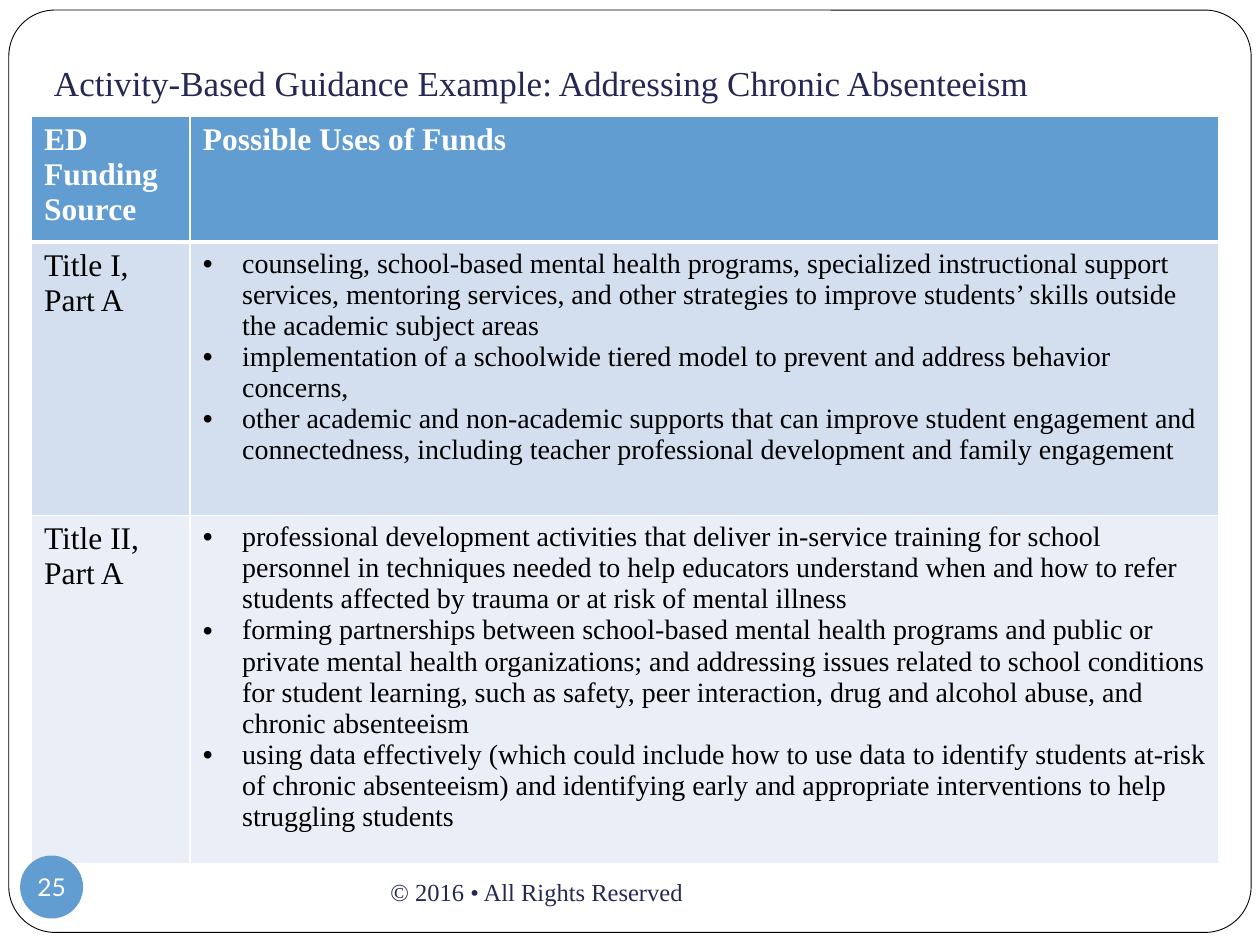
from dataclasses import dataclass

from lxml.etree import SubElement
from pptx import Presentation
from pptx.dml.color import RGBColor
from pptx.enum.shapes import MSO_SHAPE
from pptx.enum.text import MSO_ANCHOR, PP_ALIGN
from pptx.oxml.ns import qn
from pptx.util import Pt

COLORS = {
    "navy": "242852",
    "blue": "629DD1",
    "band_dark": "D3DFEE",
    "band_light": "EAEFF7",
    "white": "FFFFFF",
    "black": "000000",
}
SERIF = "Times New Roman"
BULLET_INDENT = Pt(22.5)
COLUMN_WIDTHS = (90.72, 587.52)


@dataclass(frozen=True)
class FundingRow:
    source: str
    uses: tuple[str, ...]
    height: float
    fill: str
    text_color: str = "black"
    bold: bool = False
    bulleted: bool = True
    uses_size: float = 16
    top_border: float = 1
    bottom_border: float = 1


ROWS = (
    FundingRow(
        "ED Funding Source", ("Possible Uses of Funds",), 69.84, "blue",
        text_color="white", bold=True, bulleted=False, uses_size=18, bottom_border=3,
    ),
    FundingRow(
        "Title I, Part A",
        (
            "counseling, school-based mental health programs, specialized instructional "
            "support services, mentoring services, and other strategies to improve "
            "students’ skills outside the academic subject areas",
            "implementation of a schoolwide tiered model to prevent and address behavior "
            "concerns,",
            "other academic and non-academic supports that can improve student engagement "
            "and connectedness, including teacher professional development and family "
            "engagement",
        ),
        156.24, "band_dark", top_border=3,
    ),
    FundingRow(
        "Title II, Part A",
        (
            "professional development activities that deliver in-service training for "
            "school personnel in techniques needed to help educators understand when and "
            "how to refer students affected by trauma or at risk of mental illness",
            "forming partnerships between school-based mental health programs and public "
            "or private mental health organizations; and addressing issues related to "
            "school conditions for student learning, such as safety, peer interaction, "
            "drug and alcohol abuse, and chronic absenteeism",
            "using data effectively (which could include how to use data to identify "
            "students at-risk of chronic absenteeism) and identifying early and "
            "appropriate interventions to help struggling students",
        ),
        193.68, "band_light",
    ),
)


def rgb(name: str) -> RGBColor:
    return RGBColor.from_string(COLORS[name])


def write_text(text_frame, *texts: str, size: float, color: str, font: str = SERIF,
               bold: bool = False, align=PP_ALIGN.LEFT, bulleted: bool = False) -> None:
    """Write one paragraph for each text."""
    for index, text in enumerate(texts):
        paragraph = text_frame.add_paragraph() if index else text_frame.paragraphs[0]
        paragraph.alignment = align
        run = paragraph.add_run()
        run.text = text
        run.font.name = font
        run.font.size = Pt(size)
        run.font.bold = bold
        run.font.color.rgb = rgb(color)
        if bulleted:
            properties = paragraph._p.get_or_add_pPr()
            properties.set("marL", str(BULLET_INDENT))
            properties.set("indent", str(-BULLET_INDENT))
            SubElement(properties, qn("a:buFont"), typeface="Arial")
            SubElement(properties, qn("a:buChar"), char="•")


def add_text_box(slide, left: float, top: float, width: float, height: float, text: str,
                 *, size: float, anchor, bottom_margin: float = 3.6) -> None:
    text_frame = slide.shapes.add_textbox(
        Pt(left), Pt(top), Pt(width), Pt(height)).text_frame
    text_frame.word_wrap = True
    text_frame.vertical_anchor = anchor
    text_frame.margin_bottom = Pt(bottom_margin)
    write_text(text_frame, text, size=size, color="navy")


def add_plain_shape(slide, kind, left: float, top: float, width: float, height: float,
                    *, fill: str):
    shape = slide.shapes.add_shape(kind, Pt(left), Pt(top), Pt(width), Pt(height))
    shape.shadow.inherit = False
    shape.fill.solid()
    shape.fill.fore_color.rgb = rgb(fill)
    shape.line.fill.background()
    return shape


def format_cell(cell, row: FundingRow) -> None:
    """Set the white borders first, then the fill that must follow them."""
    properties = cell._tc.get_or_add_tcPr()
    borders = {"a:lnL": 1, "a:lnR": 1, "a:lnT": row.top_border, "a:lnB": row.bottom_border}
    for tag, width in borders.items():
        line = SubElement(properties, qn(tag), w=str(Pt(width)))
        SubElement(SubElement(line, qn("a:solidFill")), qn("a:srgbClr"), val=COLORS["white"])
    cell.fill.solid()
    cell.fill.fore_color.rgb = rgb(row.fill)


def add_funding_table(slide, left: float, top: float) -> None:
    table = slide.shapes.add_table(
        len(ROWS), len(COLUMN_WIDTHS), Pt(left), Pt(top),
        Pt(sum(COLUMN_WIDTHS)), Pt(sum(row.height for row in ROWS))).table
    for column, width in zip(table.columns, COLUMN_WIDTHS):
        column.width = Pt(width)
    for index, row in enumerate(ROWS):
        table.rows[index].height = Pt(row.height)
        source_cell, uses_cell = table.rows[index].cells
        for cell in (source_cell, uses_cell):
            format_cell(cell, row)
        write_text(source_cell.text_frame, row.source, size=18,
                   color=row.text_color, bold=row.bold)
        write_text(uses_cell.text_frame, *row.uses, size=row.uses_size,
                   color=row.text_color, bold=row.bold, bulleted=row.bulleted)


def main() -> None:
    presentation = Presentation()
    presentation.slide_width, presentation.slide_height = Pt(720), Pt(540)
    slide = presentation.slides.add_slide(presentation.slide_layouts[6])

    # Rounded frame
    frame = add_plain_shape(slide, MSO_SHAPE.ROUNDED_RECTANGLE,
                            5.04, 5.76, 709.92, 527.04, fill="white")
    frame.adjustments[0] = 0.05
    frame.line.color.rgb = rgb("black")
    frame.line.width = Pt(0.5)

    # Title and table
    add_text_box(slide, 23.76, 21.6, 689.76, 44.64,
                 "Activity-Based Guidance Example: Addressing Chronic Absenteeism",
                 size=20, anchor=MSO_ANCHOR.BOTTOM, bottom_margin=7.2)
    add_funding_table(slide, 18, 66.24)

    # Page number badge
    badge = add_plain_shape(slide, MSO_SHAPE.OVAL, 11.52, 488.88, 36, 36, fill="blue")
    text_frame = badge.text_frame
    text_frame.margin_left = text_frame.margin_right = 0
    text_frame.margin_top = text_frame.margin_bottom = 0
    text_frame.word_wrap = False
    text_frame.vertical_anchor = MSO_ANCHOR.MIDDLE
    write_text(text_frame, "25", size=14, color="white", font="Lato", align=PP_ALIGN.CENTER)

    # Footer
    add_text_box(slide, 216, 491.76, 311.76, 36, "© 2016 • All Rights Reserved",
                 size=14, anchor=MSO_ANCHOR.MIDDLE)

    presentation.save("out.pptx")


if __name__ == "__main__":
    main()
